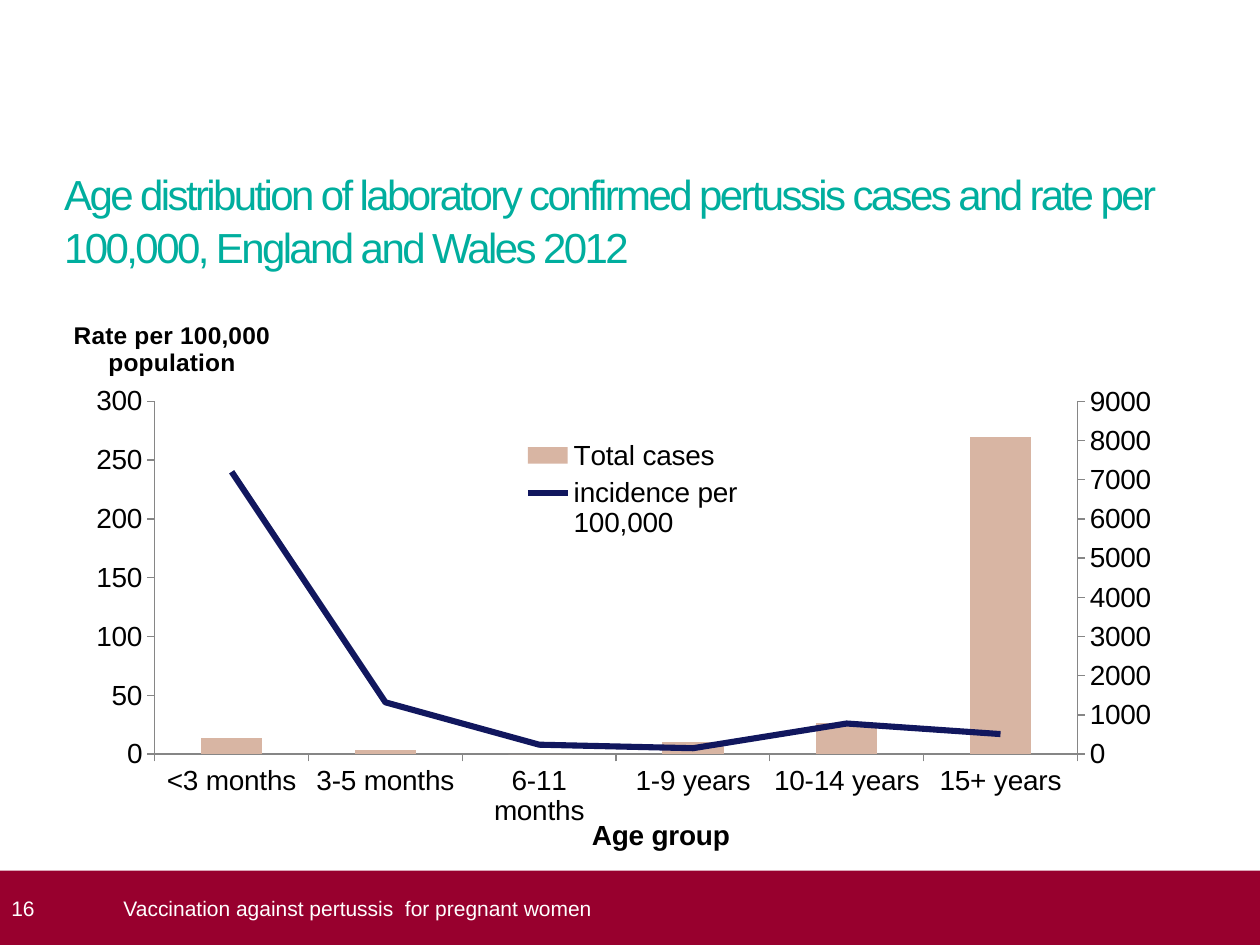
"""Build a slide with a combined chart of pertussis cases and incidence by age."""
from copy import deepcopy

from lxml.etree import SubElement
from pptx import Presentation
from pptx.chart.axis import ValueAxis
from pptx.chart.data import CategoryChartData
from pptx.dml.color import RGBColor
from pptx.enum.chart import XL_CHART_TYPE, XL_LEGEND_POSITION, XL_MARKER_STYLE, XL_TICK_MARK
from pptx.enum.shapes import MSO_SHAPE
from pptx.enum.text import MSO_ANCHOR, MSO_AUTO_SIZE, PP_ALIGN
from pptx.oxml import parse_xml
from pptx.oxml.ns import nsdecls, qn
from pptx.util import Inches, Pt

FONT = "Arial"
TEAL = RGBColor(0x00, 0xAE, 0x9E)
CRIMSON = RGBColor(0x98, 0x00, 0x2E)
SAND = RGBColor(0xD8, 0xB5, 0xA3)
NAVY = RGBColor(0x11, 0x17, 0x5E)
GRAY = RGBColor(0x86, 0x86, 0x86)
BLACK = RGBColor(0x00, 0x00, 0x00)
WHITE = RGBColor(0xFF, 0xFF, 0xFF)

FOOTER_TOP, FOOTER_HEIGHT = 6.91, 0.6
AGE_GROUPS = ["<3 months", "3-5 months", "6-11 months", "1-9 years", "10-14 years", "15+ years"]
TOTAL_CASES = [400, 100, 0, 300, 800, 8100]
INCIDENCE = [240, 44, 8, 5, 26, 17]


def set_font(font, size, color, bold=False):
    """Apply the slide's typeface with a size, colour and weight."""
    font.name, font.size, font.bold = FONT, Pt(size), bold
    font.color.rgb = color


def write_text(frame, text, size=12, color=WHITE, bold=False, align=PP_ALIGN.LEFT,
               line_spacing=None, tracking=None):
    """Fill a text frame and format each of its paragraphs."""
    frame.text = text
    for paragraph in frame.paragraphs:
        paragraph.alignment = align
        paragraph.line_spacing = line_spacing
        for run in paragraph.runs:
            set_font(run.font, size, color, bold)
            if tracking:
                run.font._element.set("spc", str(int(tracking * 100)))


def set_frame(frame, anchor, left_inset=0):
    """Wrap a text frame and set its anchor and margins."""
    frame.word_wrap = True
    frame.auto_size = MSO_AUTO_SIZE.NONE
    frame.vertical_anchor = anchor
    frame.margin_left = Inches(left_inset)
    frame.margin_top = frame.margin_right = frame.margin_bottom = 0


def add_title(slide, text):
    """Place and format the title placeholder."""
    title = slide.shapes.title
    title.left, title.top, title.width, title.height = map(Inches, (0.51, 1.31, 9.02, 1.02))
    set_frame(title.text_frame, MSO_ANCHOR.TOP)
    write_text(title.text_frame, text, size=24, color=TEAL, line_spacing=1.06, tracking=-1.5)


def add_footer(slide, number, text):
    """Draw the footer band with the slide number and the talk's name."""
    top, height = Inches(FOOTER_TOP), Inches(FOOTER_HEIGHT)
    band = slide.shapes.add_shape(MSO_SHAPE.RECTANGLE, 0, top, Inches(10), height)
    band.shadow.inherit = False
    band.fill.solid()
    band.fill.fore_color.rgb = CRIMSON
    band.line.fill.background()
    label = slide.shapes.add_textbox(Inches(0.98), top, Inches(8.82), height)
    for shape, words, inset in ((band, number, 0.09), (label, text, 0)):
        set_frame(shape.text_frame, MSO_ANCHOR.MIDDLE, inset)
        write_text(shape.text_frame, words)


def set_layout(element, index, **shares):
    """Give a chart part a manual layout in shares of the chart's size."""
    for old in element.findall(qn("c:layout")):
        element.remove(old)
    layout = parse_xml(f"<c:layout {nsdecls('c')}><c:manualLayout/></c:layout>")
    settings = {"xMode": "edge", "yMode": "edge", **shares}
    if element.tag == qn("c:plotArea"):
        settings = {"layoutTarget": "inner", **settings}
    for name, value in settings.items():
        SubElement(layout[0], qn(f"c:{name}")).set("val", str(value))
    element.insert(index, layout)


def format_axis(axis):
    """Draw a thin gray axis with outer ticks and no gridlines."""
    axis.has_major_gridlines = False
    axis.major_tick_mark = XL_TICK_MARK.OUTSIDE
    axis.minor_tick_mark = XL_TICK_MARK.NONE
    axis.format.line.color.rgb = GRAY
    axis.format.line.width = Pt(0.75)
    set_font(axis.tick_labels.font, 16, BLACK)


def set_scale(axis, maximum, step):
    """Run a value axis from zero to a maximum."""
    axis.minimum_scale, axis.maximum_scale, axis.major_unit = 0, maximum, step


def add_axis_title(axis, text, x, y, size=16):
    """Write a horizontal bold axis title at a place in the chart."""
    title = axis.axis_title
    write_text(title.text_frame, text, size=size, color=BLACK, bold=True, align=PP_ALIGN.CENTER)
    body = title._element.find(".//" + qn("a:bodyPr"))
    body.set("rot", "0")
    body.set("vert", "horz")
    set_layout(title._element, 1, x=x, y=y)


def move_to_line(chart):
    """Turn the last series into a line on a second pair of axes; return its value axis."""
    plot_area = chart._chartSpace.chart.plotArea
    bars = plot_area.find(qn("c:barChart"))
    series = bars.findall(qn("c:ser"))[-1]
    for flag in series.findall(qn("c:invertIfNegative")):
        series.remove(flag)
    line = parse_xml(
        f'<c:lineChart {nsdecls("c")}><c:grouping val="standard"/><c:varyColors val="0"/>'
        '<c:marker val="1"/><c:axId val="5001"/><c:axId val="5002"/></c:lineChart>')
    line.insert(2, series)
    bars.addnext(line)
    category, value = chart.category_axis._element, chart.value_axis._element
    line_category, line_value = deepcopy(category), deepcopy(value)
    value.addnext(line_value)
    line_value.addnext(line_category)
    for axis, own, other in ((line_category, "5001", "5002"), (line_value, "5002", "5001")):
        axis.find(qn("c:axId")).set("val", own)
        axis.find(qn("c:crossAx")).set("val", other)
    ValueAxis(line_category).visible = False
    value.find(qn("c:axPos")).set("val", "r")
    value.find(qn("c:crosses")).set("val", "max")
    return ValueAxis(line_value)


def add_cases_chart(slide):
    """Add columns for total cases and a line for incidence."""
    data = CategoryChartData()
    data.categories = AGE_GROUPS
    data.add_series("Total cases", TOTAL_CASES)
    data.add_series("incidence per 100,000", INCIDENCE)
    frame = slide.shapes.add_chart(XL_CHART_TYPE.COLUMN_CLUSTERED,
                                   *map(Inches, (0.28, 2.33, 9.12, 4.49)), data)
    chart = frame.chart
    set_font(chart.font, 16, BLACK)
    chart.has_title = False
    for axis in (chart.category_axis, chart.value_axis):
        format_axis(axis)
    rate_axis = move_to_line(chart)
    set_scale(chart.value_axis, 9000, 1000)
    set_scale(rate_axis, 300, 50)
    add_axis_title(chart.category_axis, "Age group", 0.48, 0.93)
    add_axis_title(chart.value_axis, "Total cases", 0.86, 0.05)
    add_axis_title(rate_axis, "Rate per 100,000\npopulation", 0.03, 0.04, size=14)

    columns, line = chart.plots
    columns.gap_width = 150
    columns.vary_by_categories = False
    fill = columns.series[0].format.fill
    fill.solid()
    fill.fore_color.rgb = SAND
    incidence = line.series[0]
    incidence.smooth = False
    incidence.marker.style = XL_MARKER_STYLE.NONE
    incidence.format.line.color.rgb = NAVY
    incidence.format.line.width = Pt(3.5)

    chart.has_legend = True
    chart.legend.position = XL_LEGEND_POSITION.LEFT
    chart.legend.include_in_layout = True
    set_font(chart.legend.font, 16, BLACK)
    set_layout(chart.legend._element, 1, x=0.42, y=0.25, w=0.2, h=0.2)
    set_layout(chart._chartSpace.chart.plotArea, 0, x=0.104, y=0.193, w=0.803, h=0.632)


def main():
    """Build and save the presentation."""
    presentation = Presentation()
    presentation.slide_width, presentation.slide_height = Inches(10), Inches(7.5)
    slide = presentation.slides.add_slide(presentation.slide_layouts[5])
    add_title(slide, "Age distribution of laboratory confirmed pertussis cases and rate per "
                     "100,000, England and Wales 2012")
    add_footer(slide, "16", "Vaccination against pertussis  for pregnant women")
    add_cases_chart(slide)
    presentation.save("out.pptx")


if __name__ == "__main__":
    main()
